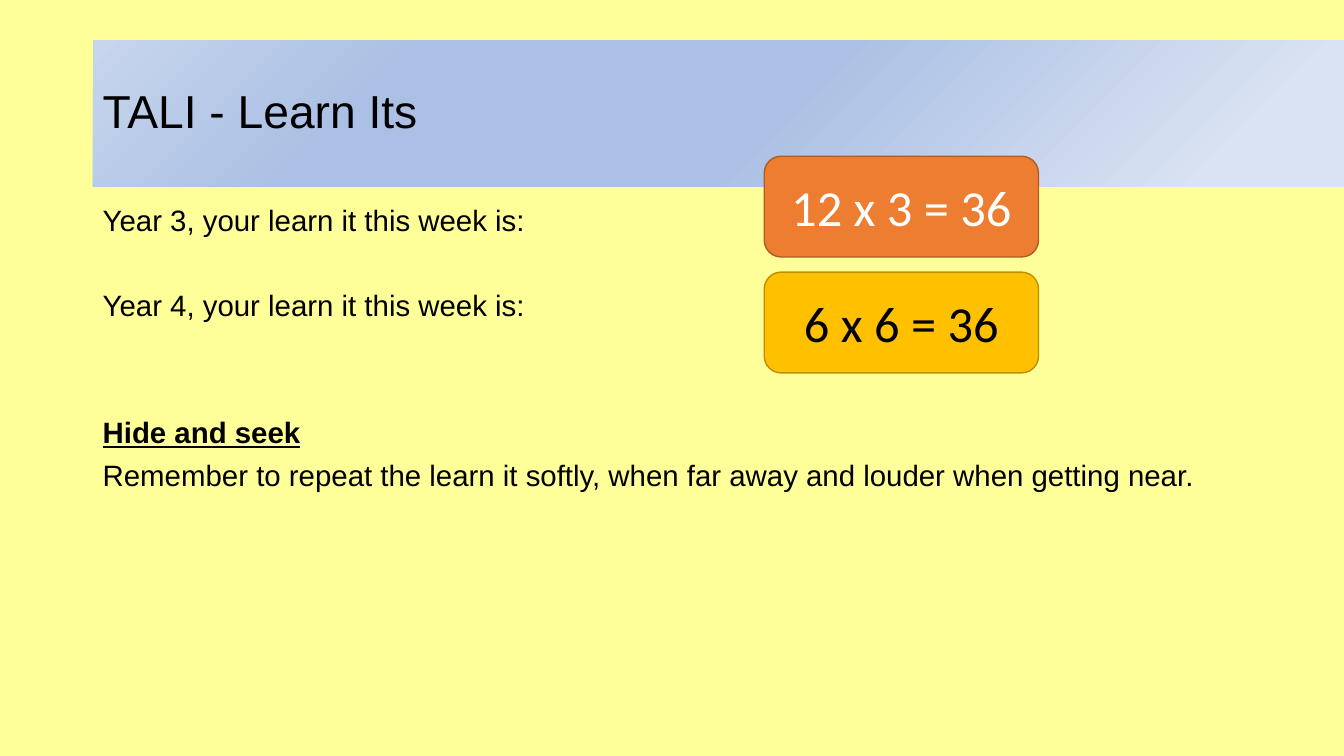
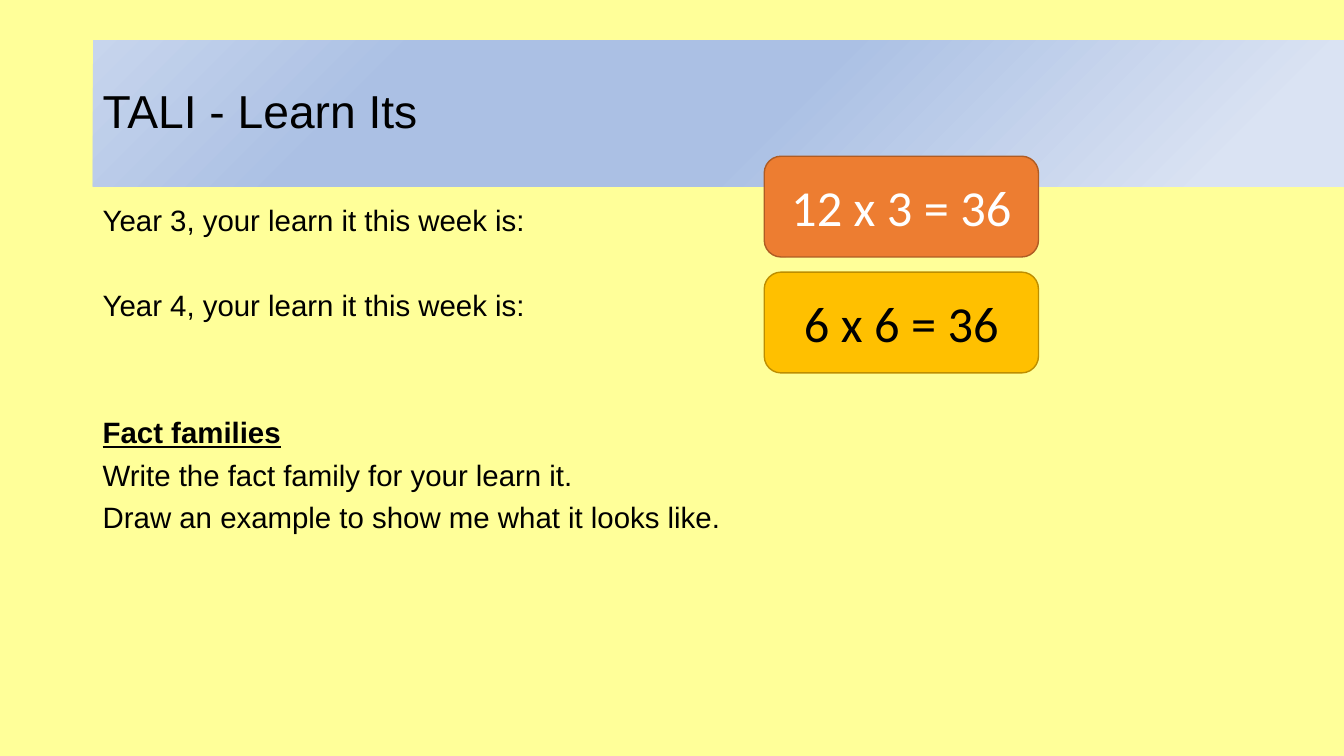
from lxml.etree import SubElement as Sub
from pptx import Presentation
from pptx.dml.color import RGBColor as RGB
from pptx.enum.shapes import MSO_SHAPE as Shape
from pptx.enum.text import MSO_ANCHOR as Anchor, PP_ALIGN as Align
from pptx.oxml.ns import qn
from pptx.util import Inches, Pt

COLORS = {
    "page": "FFFF99", "ink": "000000", "white": "FFFFFF",
    "pale": "DAE3F3", "blue": "ABC0E4", "mist": "C7D5ED",
    "orange": "ED7D31", "rust": "AF5C24",
    "gold": "FFC000", "bronze": "BD8E00",
}
STOPS = [(10, "pale"), (46, "blue"), (76, "blue"), (100, "mist")]
LEFT, TOP, TALL = 0.92, 0.4, 1.45
WIDE, HIGH = 13.33, 7.5
GAP = 7.5
YEARS = [("Year 3, your learn it this week is:", GAP),
         ("Year 4, your learn it this week is:", 38)]
FACTS = [("12 x 3 = 36", "orange", "rust", "white"),
         ("6 x 6 = 36", "gold", "bronze", "ink")]
TASKS = [
    ("Hide and seek",
     ["Remember to repeat the learn it softly, when far away and louder when getting near."]),
    ("Fact families",
     ["Write the fact family for your learn it.",
      "Draw an example to show me what it looks like."]),
]


class Deck:
    """Hold the shared style and the slide being built."""

    def __init__(self):
        self.prs = Presentation()
        self.prs.slide_width, self.prs.slide_height = Inches(WIDE), Inches(HIGH)
        self.paint(self.prs.slide_master.background.fill, "page")
        self.slide = None

    def paint(self, fill, name):
        fill.solid()
        fill.fore_color.rgb = RGB.from_string(COLORS[name])

    def add(self):
        self.slide = self.prs.slides.add_slide(self.prs.slide_layouts[6])

    def shape(self, kind, *box):
        shape = self.slide.shapes.add_shape(kind, *map(Inches, box))
        shape.shadow.inherit = False
        return shape

    def style(self, para, size, color="ink", face="Arial"):
        font = para.font
        font.name, font.size = face, Pt(size)
        font.color.rgb = RGB.from_string(COLORS[color])

    def frame(self, *box):
        frame = self.slide.shapes.add_textbox(*map(Inches, box)).text_frame
        frame.word_wrap = True
        return frame

    def band(self):
        band = self.shape(Shape.RECTANGLE, LEFT, TOP, WIDE - LEFT, TALL)
        band.line.fill.background()
        band.fill.background()
        blank = band.fill._xPr.find(qn("a:noFill"))
        grad = blank.makeelement(qn("a:gradFill"), rotWithShape="1")
        stops = Sub(grad, qn("a:gsLst"))
        for pos, name in STOPS:
            stop = Sub(stops, qn("a:gs"), pos=str(pos * 1000))
            Sub(stop, qn("a:srgbClr"), val=COLORS[name])
        sweep = Sub(grad, qn("a:path"), {"path": "circle"})
        Sub(sweep, qn("a:fillToRect"), l="100000", t="100000")
        blank.getparent().replace(blank, grad)

    def title(self, text):
        frame = self.frame(LEFT, TOP, 10.66, TALL)
        frame.vertical_anchor = Anchor.MIDDLE
        para = frame.paragraphs[0]
        para.text, para.line_spacing = text, 0.9
        self.style(para, 33)

    def body(self, head, lines):
        frame = self.frame(LEFT, 2, 11.5, 4.76)
        rows = YEARS + [(head, 68)] + [(line, GAP) for line in lines]
        for i, (text, gap) in enumerate(rows):
            para = frame.add_paragraph() if i else frame.paragraphs[0]
            para.text, para.line_spacing = text, 0.9
            para.space_before = Pt(gap)
            self.style(para, 21)
            if text == head:
                para.font.bold = para.font.underline = True

    def fact(self, row, text, fill, edge, ink):
        card = self.shape(Shape.ROUNDED_RECTANGLE, 7.58, 1.55 + 1.15 * row, 2.72, 1)
        self.paint(card.fill, fill)
        self.paint(card.line.fill, edge)
        card.line.width = Pt(1)
        card.text_frame.vertical_anchor = Anchor.MIDDLE
        para = card.text_frame.paragraphs[0]
        para.text, para.alignment = text, Align.CENTER
        self.style(para, 36, ink, "Calibri")


def main():
    deck = Deck()
    for head, lines in TASKS:
        deck.add()
        deck.band()
        deck.title("TALI - Learn Its")
        deck.body(head, lines)
        for row, fact in enumerate(FACTS):
            deck.fact(row, *fact)
    deck.prs.save("out.pptx")


if __name__ == "__main__":
    main()
